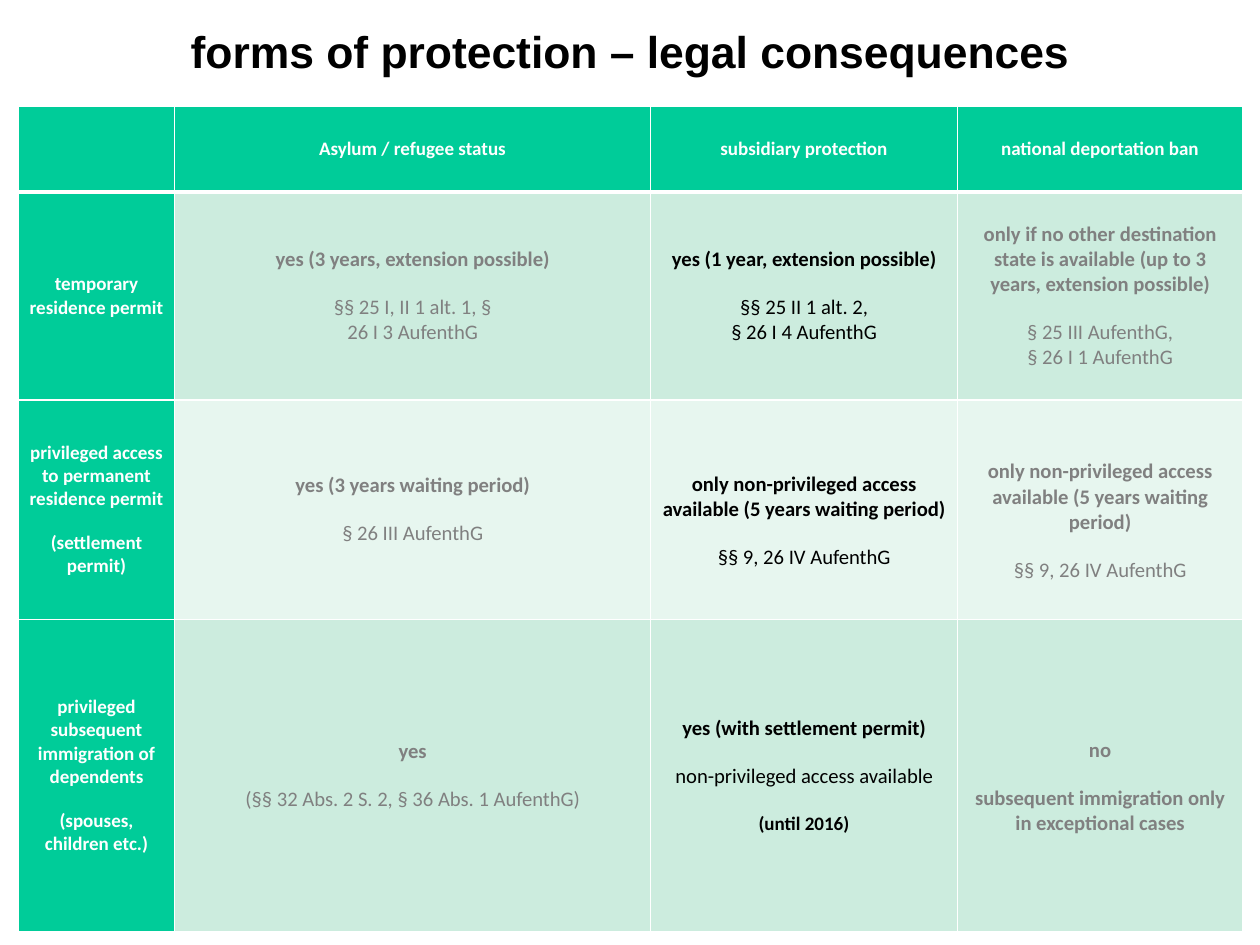
from dataclasses import dataclass

from lxml import etree
from pptx import Presentation
from pptx.dml.color import RGBColor
from pptx.enum.text import MSO_ANCHOR, PP_ALIGN
from pptx.oxml.ns import qn
from pptx.util import Cm, Inches, Pt

CENTER = PP_ALIGN.CENTER
MIDDLE = MSO_ANCHOR.MIDDLE


@dataclass(frozen=True)
class Theme:
    title_font: str = "Arial"
    table_font: str = "Calibri"
    title_size: int = 28
    label_size: int = 12
    body_size: int = 13
    label_gap: float = 13
    body_gap: float = 14.5
    green: str = "00CC99"
    bands: tuple = ("CCECDE", "E7F6EF")
    white: str = "FFFFFF"
    black: str = "000000"
    gray: str = "808080"


THEME = Theme()

# Content: a cell is a tuple of blocks, a block is (style, line, line, ...)
LABEL, STRONG, PLAIN = "label", "strong", "plain"
TITLE = "forms of protection – legal consequences"
ROWS = [
    [
        (),
        ((LABEL, "Asylum / refugee status"),),
        ((LABEL, "subsidiary protection"),),
        ((LABEL, "national deportation ban"),),
    ],
    [
        ((LABEL, "temporary residence permit"),),
        ((STRONG, "yes (3 years, extension possible)"),
         (PLAIN, "§§ 25 I, II 1 alt. 1, §", "26 I 3 AufenthG")),
        ((STRONG, "yes (1 year, extension possible)"),
         (PLAIN, "§§ 25 II 1 alt. 2,", "§ 26 I 4 AufenthG")),
        ((STRONG, "only if no other destination state is available (up to 3 years, extension possible)"),
         (PLAIN, "§ 25 III AufenthG,", "§ 26 I 1 AufenthG")),
    ],
    [
        ((LABEL, "privileged access to permanent residence permit"),
         (LABEL, "(settlement permit)")),
        ((STRONG, "yes (3 years waiting period)"),
         (PLAIN, "§ 26 III AufenthG")),
        ((STRONG, "only non-privileged access available (5 years waiting period)"),
         (PLAIN, "§§ 9, 26 IV AufenthG")),
        ((STRONG, "only non-privileged access available (5 years waiting period)"),
         (PLAIN, "§§ 9, 26 IV AufenthG")),
    ],
    [
        ((LABEL, "privileged subsequent immigration of dependents"),
         (LABEL, "(spouses,", "children etc.)")),
        ((STRONG, "yes"),
         (PLAIN, "(§§ 32 Abs. 2 S. 2, § 36 Abs. 1 AufenthG)")),
        ((STRONG, "yes (with settlement permit)"),
         (PLAIN, "non-privileged access available"),
         (LABEL, "(until 2016)")),
        ((STRONG, "no"),
         (STRONG, "subsequent immigration only in exceptional cases")),
    ],
]
COLUMN_WIDTHS = (1.37, 4.16, 2.69, 2.49)
ROW_HEIGHTS = (0.75, 1.82, 1.92, 2.73)
HIGHLIGHTED_COLUMN = 2
LOWERED_CELLS = {(2, 2), (2, 3), (3, 3)}  # text sits below the middle
LOWERED_MARGIN = 0.25


def set_borders(cell, bottom_width):
    properties = cell._tc.get_or_add_tcPr()
    widths = {"a:lnL": 1, "a:lnR": 1, "a:lnT": 1, "a:lnB": bottom_width}
    for position, (side, width) in enumerate(widths.items()):
        line = etree.Element(qn(side), w=str(Pt(width)))
        fill = etree.SubElement(line, qn("a:solidFill"))
        etree.SubElement(fill, qn("a:srgbClr"), val=THEME.white)
        properties.insert(position, line)


def write_blocks(cell, blocks, color):
    text_frame = cell.text_frame
    lines = [(style, line, index > 0 and position == 0)
             for index, (style, *block) in enumerate(blocks)
             for position, line in enumerate(block)]
    for number, (style, line, opens_block) in enumerate(lines):
        paragraph = text_frame.add_paragraph() if number else text_frame.paragraphs[0]
        paragraph.text = line
        paragraph.alignment = CENTER
        if opens_block:
            in_label_cell = blocks[0][0] == LABEL
            paragraph.space_before = Pt(THEME.label_gap if in_label_cell else THEME.body_gap)
        font = paragraph.font
        font.name = THEME.table_font
        font.size = Pt(THEME.label_size if style == LABEL else THEME.body_size)
        font.bold = style != PLAIN
        font.color.rgb = RGBColor.from_string(color)


def add_title(slide):
    title = slide.shapes.title
    title.left, title.top = Inches(0.43), Inches(0.16)
    title.width, title.height = Inches(10.16), Inches(0.57)
    title.text_frame.text = TITLE
    title.text_frame.vertical_anchor = MIDDLE
    paragraph = title.text_frame.paragraphs[0]
    paragraph.alignment = CENTER
    paragraph.font.name = THEME.title_font
    paragraph.font.size = Pt(THEME.title_size)
    paragraph.font.bold = True
    paragraph.font.color.rgb = RGBColor.from_string(THEME.black)


def add_protection_table(slide):
    table = slide.shapes.add_table(
        len(ROW_HEIGHTS), len(COLUMN_WIDTHS), Inches(0.16), Inches(0.93),
        Inches(sum(COLUMN_WIDTHS)), Inches(sum(ROW_HEIGHTS))).table
    for column, width in zip(table.columns, COLUMN_WIDTHS):
        column.width = Inches(width)
    for row, height in zip(table.rows, ROW_HEIGHTS):
        row.height = Inches(height)

    for row_index, row in enumerate(ROWS):
        for column_index, blocks in enumerate(row):
            cell = table.cell(row_index, column_index)
            if row_index == 0 or column_index == 0:
                background, color = THEME.green, THEME.white
            else:
                background = THEME.bands[(row_index - 1) % 2]
                color = THEME.black if column_index == HIGHLIGHTED_COLUMN else THEME.gray
            cell.fill.solid()
            cell.fill.fore_color.rgb = RGBColor.from_string(background)
            set_borders(cell, bottom_width=3 if row_index == 0 else 1)
            cell.vertical_anchor = MIDDLE
            if (row_index, column_index) in LOWERED_CELLS:
                cell.margin_top = Inches(LOWERED_MARGIN)
            write_blocks(cell, blocks, color)


def main():
    presentation = Presentation()
    # The page is metric: 28 by 21 cm, a custom size
    presentation.slide_width = Cm(28)
    presentation.slide_height = Cm(21)
    presentation.element.sldSz.attrib.pop("type", None)
    slide = presentation.slides.add_slide(presentation.slide_layouts.get_by_name("Title Only"))
    add_title(slide)
    add_protection_table(slide)
    presentation.save("out.pptx")


if __name__ == "__main__":
    main()
